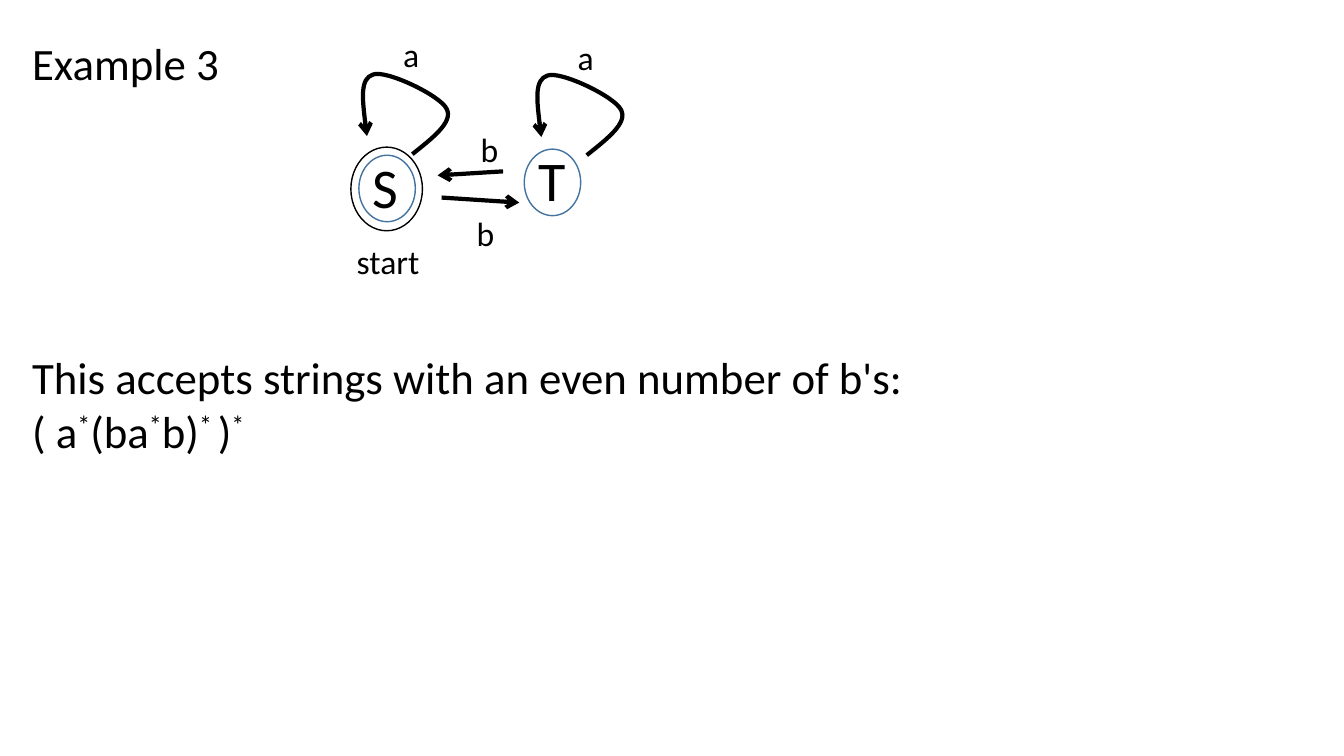
from lxml.etree import SubElement
from pptx import Presentation
from pptx.dml.color import RGBColor
from pptx.enum.shapes import MSO_CONNECTOR, MSO_SHAPE
from pptx.oxml.ns import qn
from pptx.util import Inches, Pt

BLACK = RGBColor(0x00, 0x00, 0x00)
BLUE = RGBColor(0x43, 0x73, 0x9E)
FONT = "Calibri"

# Text: box, size, paragraphs of (text, is superscript) runs
TEXTS = [
    ((0.22, 0.31, 2.25, 0.64), 32, [[("Example 3", False)]]),
    ((5.24, 1.39, 0.28, 0.77), 40, [[("T", False)]]),
    ((3.6, 1.46, 0.28, 0.77), 40, [[("S", False)]]),
    ((3.44, 2.34, 1.06, 0.5), 24, [[("start", False)]]),
    ((4.67, 1.23, 0.3, 0.5), 24, [[("b", False)]]),
    ((4.63, 2.06, 0.23, 0.5), 24, [[("b", False)]]),
    ((3.9, 0.29, 0.31, 0.5), 24, [[("a", False)]]),
    ((5.63, 0.32, 0.31, 0.5), 24, [[("a", False)]]),
    ((0.22, 3.42, 11.52, 1.18), 32, [
        [("This accepts strings with an even number of b's:", False)],
        [("( a", False), ("*", True), ("(ba", False), ("*", True),
         ("b)", False), ("* ", True), (")", False), ("*", True)],
    ]),
]
STATES = [
    ((5.2, 1.48, 0.56, 0.66), BLUE),
    ((3.56, 1.54, 0.56, 0.66), BLUE),
    ((3.48, 1.46, 0.71, 0.83), BLACK),
]
TRANSITIONS = [((4.38, 1.96), (5.15, 2.01)), ((4.99, 1.7), (4.34, 1.74))]

# Self-loops share one curve, measured from the corner of its box
LOOP_CORNERS = [(3.6, 0.73), (5.33, 0.74)]
LOOP_SIZE = (0.84, 0.8)
LOOP_START = (0.49, 0.8)
LOOP_CURVES = [
    [(0.69, 0.64), (0.9, 0.48), (0.83, 0.35)],
    [(0.77, 0.22), (0.23, -0.04), (0.1, 0.01)],
    [(-0.03, 0.05), (0, 0.33), (0.04, 0.62)],
]


def add_text(s, box, size, paragraphs):
    tf = s.shapes.add_textbox(*map(Inches, box)).text_frame
    tf.word_wrap = True
    for i, runs in enumerate(paragraphs):
        p = tf.paragraphs[0] if i == 0 else tf.add_paragraph()
        for text, superscript in runs:
            r = p.add_run()
            r.text = text
            r.font.name, r.font.size = FONT, Pt(size)
            r.font.color.rgb = BLACK
            if superscript:
                r.font._element.set("baseline", "30000")


def style_arrow(sp):
    sp.line.color.rgb = BLACK
    sp.line.width = Pt(3)
    SubElement(sp.line._get_or_add_ln(), qn("a:tailEnd"), type="arrow")


def add_state(s, box, color):
    sp = s.shapes.add_shape(MSO_SHAPE.OVAL, *map(Inches, box))
    sp.shadow.inherit = False
    sp.fill.background()
    sp.line.color.rgb = color
    sp.line.width = Pt(1)


def add_transition(s, start, end):
    sp = s.shapes.add_connector(MSO_CONNECTOR.STRAIGHT, *map(Inches, start + end))
    style_arrow(sp)
    SubElement(sp._element.spPr, qn("a:effectLst"))


def add_loop(s, corner):
    """Frame a freeform on the loop's box, then give its path Bezier segments."""
    w, h = map(Inches, LOOP_SIZE)
    builder = s.shapes.build_freeform(0, 0)
    builder.add_line_segments([(w, 0), (w, h), (0, h)], close=False)
    sp = builder.convert_to_shape(*map(Inches, corner))
    outline = next(sp._element.iter(qn("a:path")))
    for segment in list(outline):
        outline.remove(segment)
    segments = [("a:moveTo", [LOOP_START])]
    segments += [("a:cubicBezTo", curve) for curve in LOOP_CURVES]
    for tag, points in segments:
        segment = SubElement(outline, qn(tag))
        for x, y in points:
            SubElement(segment, qn("a:pt"), x=str(int(Inches(x))), y=str(int(Inches(y))))
    sp.shadow.inherit = False
    sp.fill.background()
    style_arrow(sp)


def main():
    prs = Presentation()
    prs.slide_width, prs.slide_height = Inches(13.33), Inches(7.5)
    s = prs.slides.add_slide(prs.slide_layouts[6])
    for corner in LOOP_CORNERS:
        add_loop(s, corner)
    for box, color in STATES:
        add_state(s, box, color)
    for start, end in TRANSITIONS:
        add_transition(s, start, end)
    for box, size, paragraphs in TEXTS:
        add_text(s, box, size, paragraphs)
    prs.save("out.pptx")


if __name__ == "__main__":
    main()
